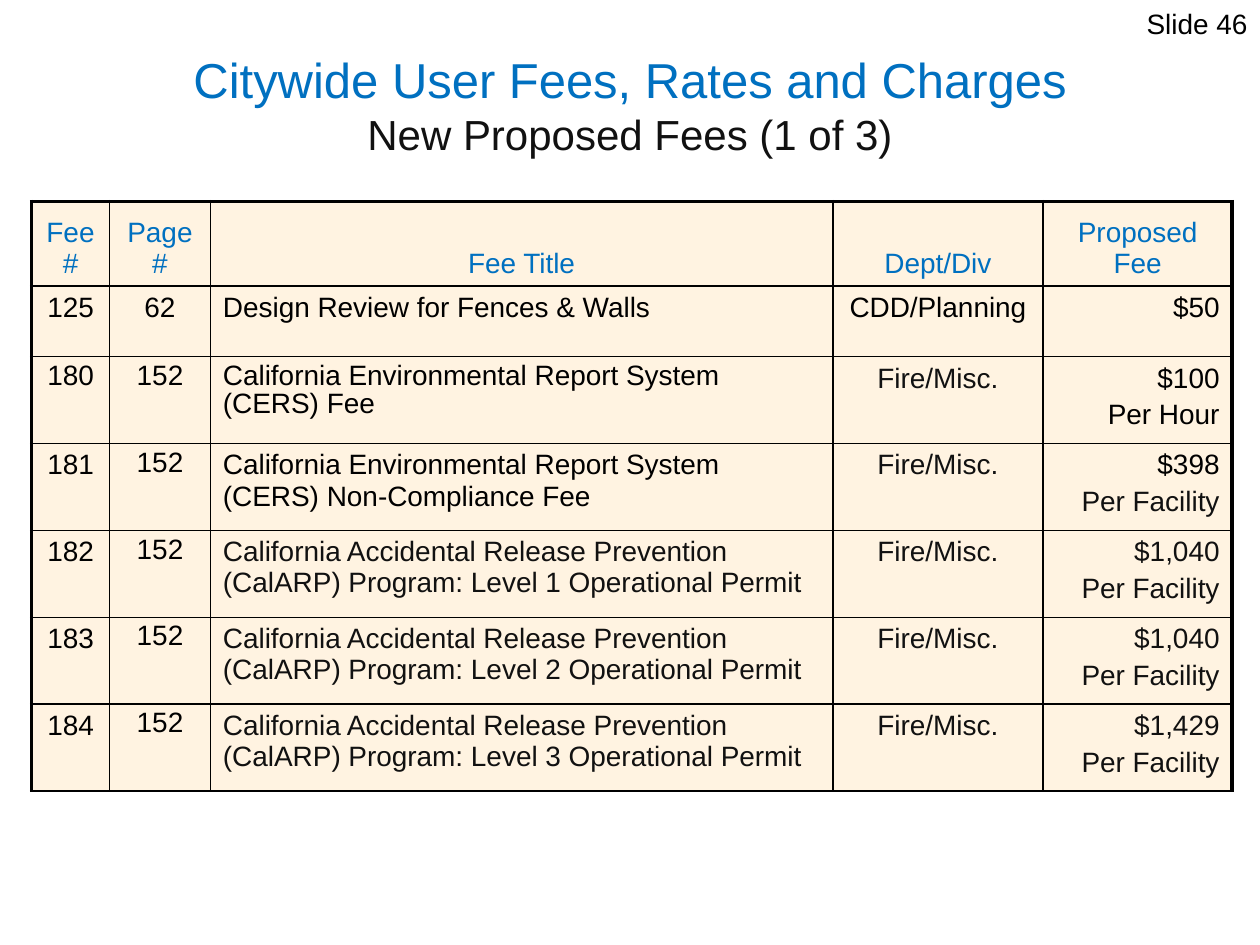
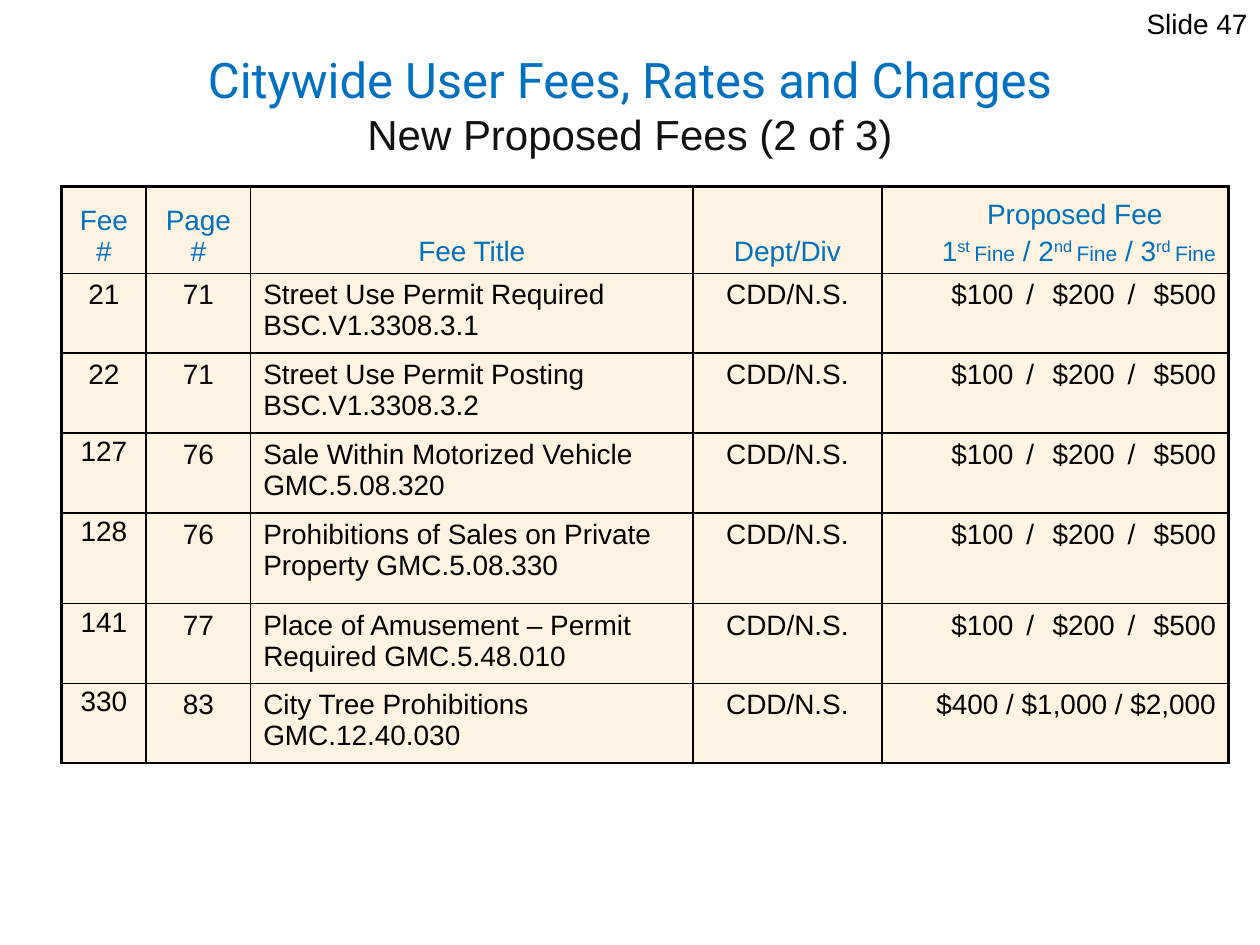
from dataclasses import dataclass
from lxml.etree import SubElement
from pptx import Presentation
from pptx.dml.color import RGBColor
from pptx.enum.text import MSO_ANCHOR, PP_ALIGN
from pptx.oxml.ns import qn
from pptx.util import Inches, Pt


@dataclass(frozen=True)
class Theme:
    blue: str = "0070C0"
    black: str = "000000"
    soft: str = "111111"
    cream: str = "FFF3E1"
    face: str = "Arial"
    head: int = 28
    sub: int = 24
    body: int = 16
    small: int = 12
    thin: float = 1
    thick: float = 2.25


LEFT, MID, RIGHT = PP_ALIGN.LEFT, PP_ALIGN.CENTER, PP_ALIGN.RIGHT
ALIGNS = [MID, MID, LEFT, MID, RIGHT]
HEADS = ["Fee #", "Page #", "Fee Title", "Dept/Div"]
MARKS = {"^": ("baseline", "30000"), "~": ("spc", "300")}


class Deck:
    """Build fee slides that share one theme."""

    def __init__(self, theme):
        self.theme = theme
        self.show = Presentation()
        self.show.slide_width, self.show.slide_height = Inches(10), Inches(7.5)
        self.slide = None

    def style(self, font, size, color, face=None):
        font.size = Pt(size)
        font.name = face or self.theme.face
        font.color.rgb = RGBColor.from_string(color)

    def start(self, number, part, face):
        self.slide = self.show.slides.add_slide(self.show.slide_layouts[6])
        self.title(part, face)
        self.label(number)

    def box(self, left, top, width, height, align):
        area = [Inches(n) for n in (left, top, width, height)]
        frame = self.slide.shapes.add_textbox(*area).text_frame
        frame.word_wrap = True
        frame.paragraphs[0].alignment = align
        return frame

    def title(self, part, face):
        look = self.theme
        frame = self.box(0.5, 0.33, 9, 1, MID)
        frame.vertical_anchor = MSO_ANCHOR.MIDDLE
        para = frame.paragraphs[0]
        run = para.add_run()
        run.text = "Citywide User Fees, Rates and Charges"
        self.style(run.font, look.head, look.blue, face)
        para.add_line_break()
        run = para.add_run()
        run.text = f"New Proposed Fees ({part} of 3)"
        self.style(run.font, look.sub, look.soft)

    def label(self, number):
        para = self.box(7.67, 0, 2.33, 0.5, RIGHT).paragraphs[0]
        para.text = f"Slide {number}"
        self.style(para.font, self.theme.body, self.theme.black)

    def runs(self, para, text):
        for piece in text.split("|"):
            run = para.add_run()
            run.text = piece.lstrip("^~_")
            if piece[0] in MARKS:
                run.font._element.set(*MARKS[piece[0]])
            elif piece[0] == "_":
                run.font.size = Pt(self.theme.small)

    def edge(self, cell, side, width):
        line = SubElement(cell._tc.get_or_add_tcPr(), qn(f"a:ln{side}"), w=str(Pt(width)))
        fill = SubElement(line, qn("a:solidFill"))
        SubElement(fill, qn("a:srgbClr"), val=self.theme.black)

    def cell(self, cell, text, align, color, tight):
        look = self.theme
        frame = cell.text_frame
        for i, line in enumerate(text.split("\n")):
            para = frame.add_paragraph() if i else frame.paragraphs[0]
            para.alignment = align
            if i:
                para.space_before = Pt(0.2 * look.body)
            if tight:
                para.line_spacing = 0.9
            self.runs(para, line)
            self.style(para.font, look.body, look.soft if line == "Per Facility" else color)

    def table(self, left, top, widths, heights, rows, tight=(), soft=()):
        look = self.theme
        area = [Inches(n) for n in (left, top, sum(widths), sum(heights))]
        grid = self.slide.shapes.add_table(len(rows), len(widths), *area).table
        grid.first_row = grid.horz_banding = False
        for col, width in zip(grid.columns, widths):
            col.width = Inches(width)
        for row, height in zip(grid.rows, heights):
            row.height = Inches(height)
        for r, row in enumerate(rows):
            for c, text in enumerate(row):
                cell = grid.cell(r, c)
                outer = {"L": c == 0, "R": c == len(row) - 1, "T": r == 0, "B": False}
                for side, bold in outer.items():
                    self.edge(cell, side, look.thick if bold else look.thin)
                cell.fill.solid()
                cell.fill.fore_color.rgb = RGBColor.from_string(look.cream)
                color = look.soft if (r, c) in soft else look.black
                if r == 0:
                    color = look.blue
                    cell.vertical_anchor = MSO_ANCHOR.BOTTOM
                self.cell(cell, text, ALIGNS[c] if r else MID, color, (r, c) in tight)
        return grid


def first(deck):
    deck.start(46, 1, deck.theme.face)
    report = "California Environmental Report System (CERS)"
    plan = "California Accidental Release Prevention (CalARP) Program: Level {} Operational Permit"
    rows = [
        HEADS + ["Proposed Fee"],
        ["125", "62", "Design Review for Fences & Walls", "CDD/Planning", "$50"],
        ["180", "152", f"{report} Fee", "Fire/Misc.", "$100\nPer Hour"],
        ["181", "152", f"{report} Non-Compliance Fee", "Fire/Misc.", "$398\nPer Facility"],
    ]
    for level, cost in enumerate(["$1,040", "$1,040", "$1,429"], 1):
        rows.append([str(181 + level), "152", plan.format(level), "Fire/Misc.",
                     f"{cost}\nPer Facility"])
    tight = {(r, 1) for r in range(2, 7)} | {(2, 0), (2, 2)}
    soft = {(r, 3) for r in range(2, 7)} | {(r, c) for r in range(4, 7) for c in (2, 4)}
    deck.table(0.25, 1.6, [0.62, 0.8, 4.94, 1.67, 1.5],
               [0.67, 0.56] + [0.69] * 5, rows, tight, soft)


def second(deck):
    deck.start(47, 2, "Roboto")
    fines = "1|^st |_Fine| / 2|^nd |_Fine| / 3|^rd |_Fine"
    rows = [HEADS + [f"Proposed Fee\n{fines}"]]
    items = [
        ("21", "71", "Street Use Permit Required BSC.V1.3308.3.1"),
        ("22", "71", "Street Use Permit Posting BSC.V1.3308.3.2"),
        ("127", "76", "Sale Within Motorized Vehicle GMC.5.08.320"),
        ("128", "76", "Prohibitions of Sales on Private Property GMC.5.08.330"),
        ("141", "77", "Place of Amusement – Permit Required GMC.5.48.010"),
        ("330", "83", "City Tree Prohibitions GMC.12.40.030"),
    ]
    rows += [[*item, "CDD/N.S.", "$100|~ / |$200|~ / |$500"] for item in items]
    rows[-1][-1] = "$400 / $1,000 / $2,000"
    grid = deck.table(0.49, 1.48, [0.67, 0.83, 3.51, 1.5, 2.75],
                      [0.69, 0.63, 0.63, 0.63, 0.72, 0.63, 0.63], rows,
                      {(r, 0) for r in range(3, 7)})
    upper, lower = grid.cell(0, 4).text_frame.paragraphs
    upper._p.get_or_add_pPr().set("marL", str(Inches(0.31)))
    lower.alignment = RIGHT


def main():
    deck = Deck(Theme())
    first(deck)
    second(deck)
    deck.show.save("out.pptx")


if __name__ == "__main__":
    main()
